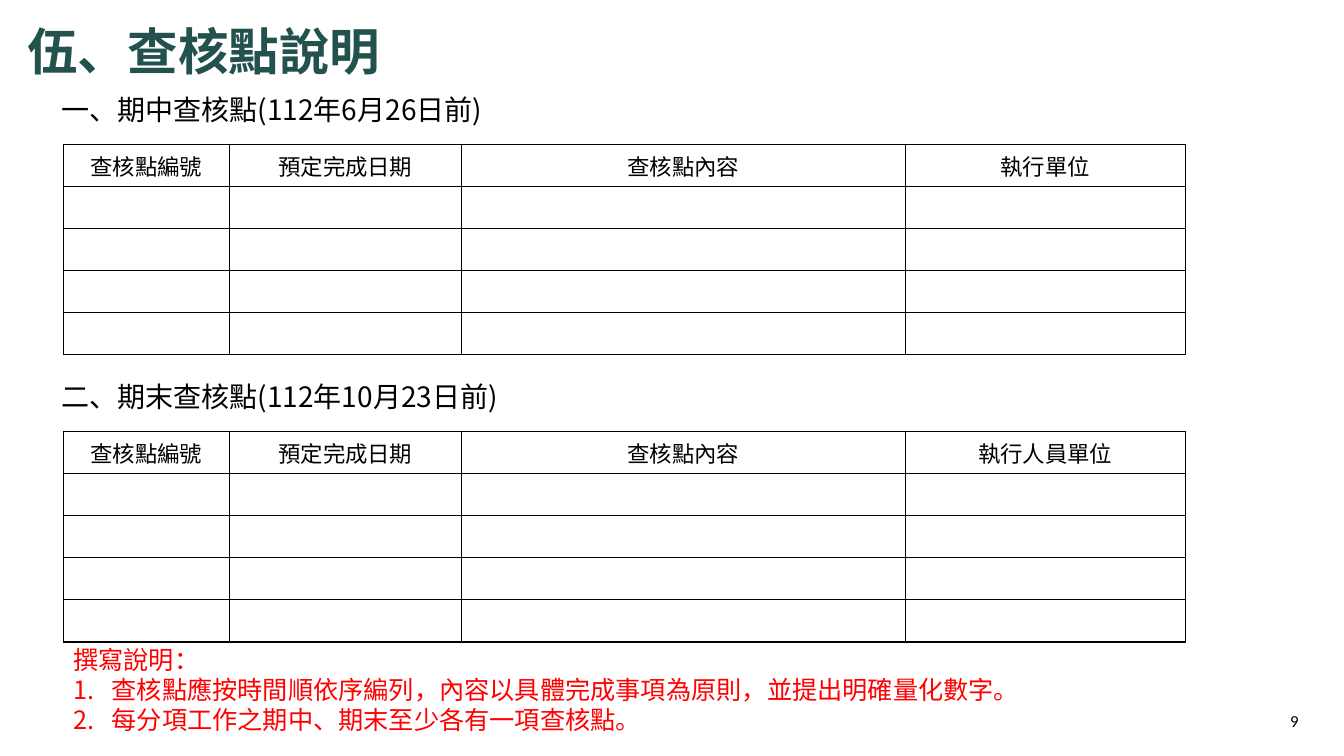
import dataclasses
import lxml.etree
import pptx
import pptx.dml.color
import pptx.enum.text
import pptx.oxml
import pptx.oxml.ns
import pptx.util


@dataclasses.dataclass(frozen=True)
class Theme:
    heading_font: str = "Noto Sans CJK SC"
    body_font: str = "Calibri"
    title_color: str = "23514D"
    text_color: str = "000000"
    note_color: str = "FF0000"
    paper: str = "FFFFFF"
    title_size: int = 36
    heading_size: int = 20
    note_size: int = 18
    cell_size: int = 16
    number_size: int = 12
    cell_leading: int = 24


@dataclasses.dataclass(frozen=True)
class Box:
    """Percentages of the slide's width and height."""
    left: float
    top: float
    width: float
    height: float

    def lengths(self):
        return (
            pptx.util.Inches(SLIDE_WIDTH * self.left / 100),
            pptx.util.Inches(SLIDE_HEIGHT * self.top / 100),
            pptx.util.Inches(SLIDE_WIDTH * self.width / 100),
            pptx.util.Inches(SLIDE_HEIGHT * self.height / 100),
        )


THEME = Theme()
SLIDE_WIDTH = 13.33
SLIDE_HEIGHT = 7.5
COLUMN_WEIGHTS = (1.65, 2.3, 4.41, 2.78)
ROW_COUNT = 5
HEADERS = ("查核點編號", "預定完成日期", "查核點內容")
SECTIONS = (
    ("一、期中查核點(112年6月26日前)", "執行單位"),
    ("二、期末查核點(112年10月23日前)", "執行人員單位"),
)
FIRST_SECTION = Box(4.72, 11.6, 83.48, 35.33)
SECTION_STEP = 38
NOTES = (
    "查核點應按時間順依序編列，內容以具體完成事項為原則，並提出明確量化數字。",
    "每分項工作之期中、期末至少各有一項查核點。",
)


def format_paragraph(paragraph, size, color, name=THEME.heading_font, bold=False):
    font = paragraph.font
    font.size = pptx.util.Pt(size)
    font.bold = bold
    font.color.rgb = pptx.dml.color.RGBColor.from_string(color)
    font.name = name
    latin = paragraph._p.find(".//" + pptx.oxml.ns.qn("a:latin"))
    east_asian = lxml.etree.Element(pptx.oxml.ns.qn("a:ea"), typeface=THEME.heading_font)
    latin.addnext(east_asian)


def add_title(slide, box):
    title = slide.shapes.title
    title.left, title.top, title.width, title.height = box.lengths()
    frame = title.text_frame
    frame.text = "伍、查核點說明"
    frame.vertical_anchor = pptx.enum.text.MSO_ANCHOR.TOP
    frame.auto_size = pptx.enum.text.MSO_AUTO_SIZE.SHAPE_TO_FIT_TEXT
    frame.paragraphs[0].alignment = pptx.enum.text.PP_ALIGN.LEFT
    format_paragraph(frame.paragraphs[0], THEME.title_size, THEME.title_color, bold=True)


def add_text(slide, box, text):
    shape = slide.shapes.add_textbox(*box.lengths())
    shape.text_frame.word_wrap = True
    shape.text_frame.text = text
    return shape


def add_page_number(slide, box):
    frame = add_text(slide, box, "9").text_frame
    frame.vertical_anchor = pptx.enum.text.MSO_ANCHOR.MIDDLE
    paragraph = frame.paragraphs[0]
    paragraph.alignment = pptx.enum.text.PP_ALIGN.CENTER
    format_paragraph(paragraph, THEME.number_size, THEME.text_color, THEME.body_font)


def number_paragraph(paragraph):
    properties = paragraph._p.get_or_add_pPr()
    indent = pptx.util.Inches(0.38)
    properties.set("marL", str(indent))
    properties.set("indent", str(-indent))
    lxml.etree.SubElement(properties, pptx.oxml.ns.qn("a:buAutoNum"), type="arabicPeriod")


def add_notes_box(slide, box):
    shape = add_text(slide, box, "\n".join(("撰寫說明：", *NOTES)))
    shape.fill.solid()
    shape.fill.fore_color.rgb = pptx.dml.color.RGBColor.from_string(THEME.paper)
    for index, paragraph in enumerate(shape.text_frame.paragraphs):
        if index:
            number_paragraph(paragraph)
        format_paragraph(paragraph, THEME.note_size, THEME.note_color, THEME.body_font)


def format_cell(cell, text):
    cell.text = text
    cell.vertical_anchor = pptx.enum.text.MSO_ANCHOR.MIDDLE
    cell.margin_left = cell.margin_right = pptx.util.Inches(0.07)
    cell.margin_top = cell.margin_bottom = 0
    paragraph = cell.text_frame.paragraphs[0]
    paragraph.alignment = pptx.enum.text.PP_ALIGN.CENTER
    paragraph.line_spacing = pptx.util.Pt(THEME.cell_leading)
    format_paragraph(paragraph, THEME.cell_size, THEME.text_color)
    properties = cell._tc.get_or_add_tcPr()
    for side in ("lnL", "lnR", "lnT", "lnB"):
        properties.append(pptx.oxml.parse_xml(
            f'<a:{side} {pptx.oxml.ns.nsdecls("a")} w="{pptx.util.Pt(1)}"><a:solidFill>'
            f'<a:srgbClr val="{THEME.text_color}"/></a:solidFill></a:{side}>'
        ))
    cell.fill.background()


def add_checkpoint_table(slide, box, headers):
    left, top, width, height = box.lengths()
    frame = slide.shapes.add_table(ROW_COUNT, len(headers), left, top, width, height)
    table = frame.table
    table.first_row = table.horz_banding = False
    for column, weight in zip(table.columns, COLUMN_WEIGHTS):
        column.width = int(width * weight / sum(COLUMN_WEIGHTS))
    for row_index, row in enumerate(table.rows):
        row.height = height // ROW_COUNT
        for cell, header in zip(row.cells, headers):
            format_cell(cell, "" if row_index else header)


def add_section(slide, box, heading, last_header):
    heading_box = Box(box.left - 0.9, box.top, 44.7, 5.87)
    frame = add_text(slide, heading_box, heading).text_frame
    format_paragraph(frame.paragraphs[0], THEME.heading_size, THEME.text_color)
    offset = 7.47
    table_box = Box(box.left, box.top + offset, box.width, box.height - offset)
    add_checkpoint_table(slide, table_box, (*HEADERS, last_header))


def main():
    presentation = pptx.Presentation()
    presentation.slide_width = pptx.util.Inches(SLIDE_WIDTH)
    presentation.slide_height = pptx.util.Inches(SLIDE_HEIGHT)
    slide = presentation.slides.add_slide(presentation.slide_layouts.get_by_name("Title Only"))
    add_title(slide, Box(1.27, 2, 32.5, 9.47))
    add_page_number(slide, Box(94.05, 92.67, 4.5, 5.33))
    add_notes_box(slide, Box(FIRST_SECTION.left, 84.53, FIRST_SECTION.width, 13.47))
    for index, (heading, last_header) in enumerate(SECTIONS):
        box = dataclasses.replace(FIRST_SECTION, top=FIRST_SECTION.top + index * SECTION_STEP)
        add_section(slide, box, heading, last_header)
    presentation.save("out.pptx")


if __name__ == "__main__":
    main()
